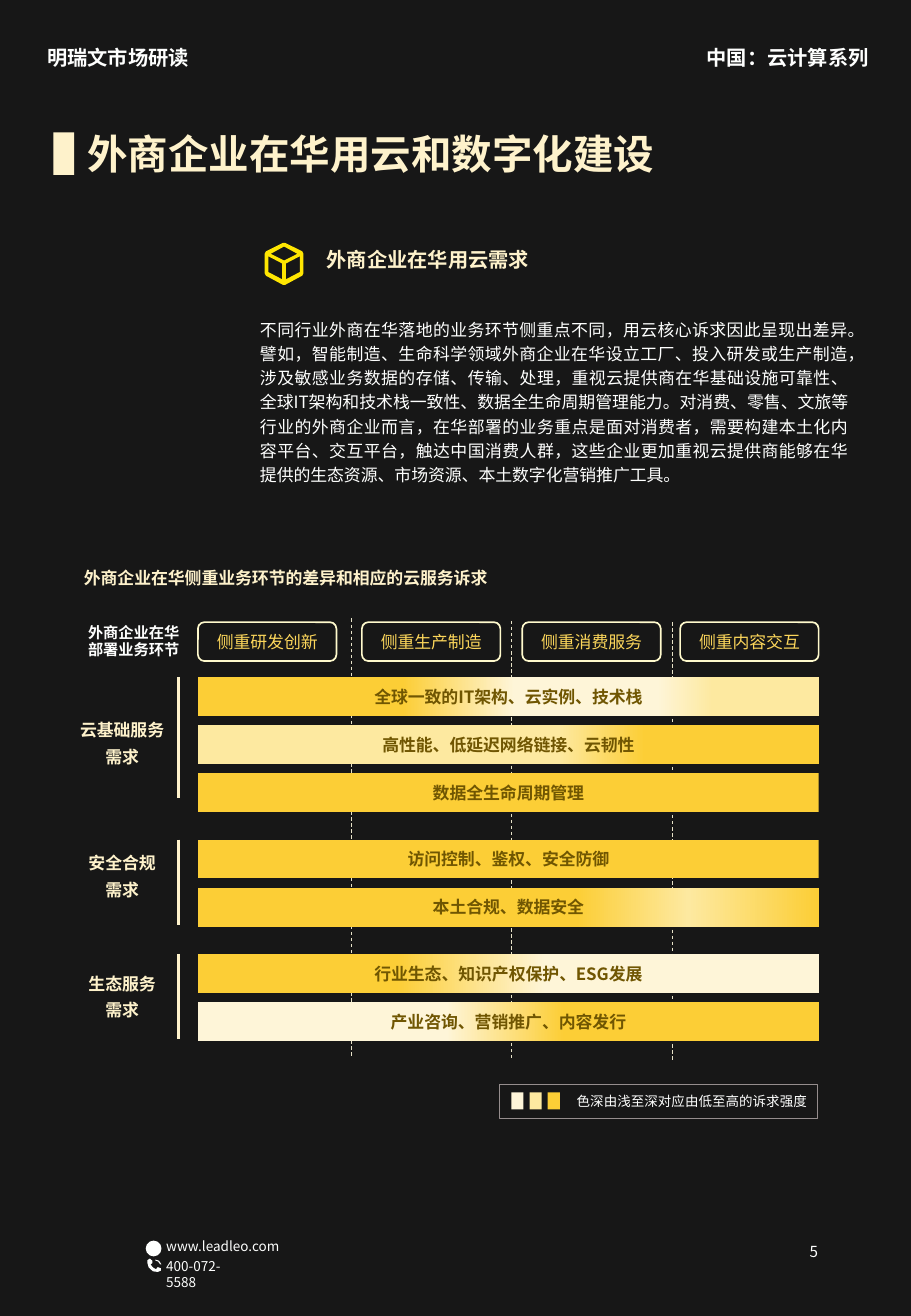
import copy

import pptx
import pptx.dml.color
import pptx.enum.dml
import pptx.enum.shapes
import pptx.enum.text
import pptx.oxml.ns
import pptx.util
from lxml import etree
from pptx.util import Inches

FONT = "Noto Sans CJK SC"
COLORS = {
    "night": "171717", "white": "FEFFFE", "cream": "FEF2CB", "gold": "FCD65B",
    "yellow": "FFE601", "outline": "FFFACD", "dash": "E6E1C7", "gray": "958D8D",
    "brown": "705602", "low": "FEF5D8", "mid": "FDE9A0", "high": "FCCE36",
}
ALIGN = {
    "left": pptx.enum.text.PP_ALIGN.LEFT,
    "center": pptx.enum.text.PP_ALIGN.CENTER,
    "justify": pptx.enum.text.PP_ALIGN.JUSTIFY,
}
ANCHOR = {"top": pptx.enum.text.MSO_ANCHOR.TOP, "middle": pptx.enum.text.MSO_ANCHOR.MIDDLE}
SHAPES = pptx.enum.shapes.MSO_SHAPE
qn = pptx.oxml.ns.qn

BODY = (
    "不同行业外商在华落地的业务环节侧重点不同，用云核心诉求因此呈现出差异。"
    "譬如，智能制造、生命科学领域外商企业在华设立工厂、投入研发或生产制造，"
    "涉及敏感业务数据的存储、传输、处理，重视云提供商在华基础设施可靠性、"
    "全球IT架构和技术栈一致性、数据全生命周期管理能力。对消费、零售、文旅等"
    "行业的外商企业而言，在华部署的业务重点是面对消费者，需要构建本土化内容"
    "平台、交互平台，触达中国消费人群，这些企业更加重视云提供商能够在华提供"
    "的生态资源、市场资源、本土数字化营销推广工具。"
)
STAGES = [(1.63, "侧重研发创新"), (2.98, "侧重生产制造"),
          (4.3, "侧重消费服务"), (5.6, "侧重内容交互")]
DIVIDERS = [(2.89, 5.09), (4.21, 5.11), (5.54, 5.12)]
SOLID = [(0, "high"), (100, "high")]
NEEDS = [
    ("云基础服务\n需求", 5.57, 1.0, 5.81, [
        ("全球一致的IT架构、云实例、技术栈",
         [(0, "high"), (33, "high"), (51, "low"), (74, "low"), (83, "mid"), (100, "mid")]),
        ("高性能、低延迟网络链接、云韧性",
         [(11, "mid"), (58, "mid"), (72, "high"), (100, "high")]),
        ("数据全生命周期管理", SOLID),
    ]),
    ("安全合规\n需求", 6.91, 0.7, 6.91, [
        ("访问控制、鉴权、安全防御", SOLID),
        ("本土合规、数据安全", [(11, "high"), (61, "high"), (79, "mid"), (100, "high")]),
    ]),
    ("生态服务\n需求", 7.85, 0.7, 7.9, [
        ("行业生态、知识产权保护、ESG发展",
         [(3, "high"), (32, "high"), (56, "low"), (100, "low")]),
        ("产业咨询、营销推广、内容发行",
         [(0, "low"), (40, "low"), (59, "high"), (100, "high")]),
    ]),
]
CUBE = [
    [(2500, 2090), (2490, 2070), (2350, 2000), (2330, 2000), (2190, 2070), (2180, 2090),
     (2180, 2250), (2190, 2270), (2330, 2345), (2350, 2345), (2490, 2270), (2500, 2250)],
    [(2340, 2030), (2450, 2090), (2340, 2145), (2230, 2090)],
    [(2210, 2110), (2325, 2170), (2325, 2300), (2210, 2240)],
    [(2470, 2240), (2355, 2300), (2355, 2170), (2470, 2110)],
]
PHONE = [
    [(1215, 10400), (1215, 10375), (1235, 10362), (1255, 10380), (1255, 10400),
     (1240, 10410), (1260, 10435), (1285, 10450), (1300, 10432), (1325, 10442),
     (1325, 10462), (1300, 10472), (1260, 10467), (1225, 10435)],
    [(1280, 10370), (1310, 10380), (1330, 10410), (1320, 10410), (1303, 10387),
     (1280, 10378)],
]


def rgb(name):
    return pptx.dml.color.RGBColor.from_string(COLORS[name])


def write_text(tf, text, size=10, color="white", bold=False, align="left",
               anchor="top", spacing=1.0, inset=(0.1, 0.05)):
    tf.word_wrap = True
    tf.auto_size = pptx.enum.text.MSO_AUTO_SIZE.NONE
    tf.vertical_anchor = ANCHOR[anchor]
    tf.margin_left = tf.margin_right = Inches(inset[0])
    tf.margin_top = tf.margin_bottom = Inches(inset[1])
    for i, line in enumerate(text.split("\n")):
        p = tf.add_paragraph() if i else tf.paragraphs[0]
        p.alignment = ALIGN[align]
        p.line_spacing = spacing
        p.space_before = p.space_after = pptx.util.Pt(0)
        r = p.add_run()
        r.text = line
        r.font.size = pptx.util.Pt(size)
        r.font.bold = bold
        r.font.color.rgb = rgb(color)
        r.font.name = FONT
        rPr = r._r.get_or_add_rPr()
        rPr.set("lang", "zh-CN")
        etree.SubElement(rPr, qn("a:ea")).set("typeface", FONT)


class Page:
    """Draws styled elements on the current slide."""

    def __init__(self, prs):
        self.s = prs.slides.add_slide(prs.slide_layouts[1])
        fill = self.s.background.fill
        fill.solid()
        fill.fore_color.rgb = rgb("night")

    def placeholder(self, index, box, text, **fmt):
        sp = self.s.placeholders[index]
        sp.left, sp.top, sp.width, sp.height = map(Inches, box)
        if index:
            pPr = sp.text_frame.paragraphs[0]._p.get_or_add_pPr()
            pPr.set("marL", "0")
            pPr.set("indent", "0")
            etree.SubElement(pPr, qn("a:buNone"))
        write_text(sp.text_frame, text, **fmt)

    def text(self, box, text, **fmt):
        sp = self.s.shapes.add_textbox(*map(Inches, box))
        write_text(sp.text_frame, text, **fmt)

    def label(self, box, text, **fmt):
        self.text(box, text, anchor="middle", inset=(0.04, 0.02), **fmt)

    def paint(self, sp, fill=None, line=None, width=1):
        sp.shadow.inherit = False
        if fill:
            sp.fill.solid()
            sp.fill.fore_color.rgb = rgb(fill)
        else:
            sp.fill.background()
        if line:
            sp.line.color.rgb = rgb(line)
            sp.line.width = pptx.util.Pt(width)
        else:
            sp.line.fill.background()

    def shape(self, box, kind=SHAPES.RECTANGLE, **paint):
        sp = self.s.shapes.add_shape(kind, *map(Inches, box))
        self.paint(sp, **paint)
        return sp

    def bar(self, box, text, stops):
        sp = self.shape(box)
        sp.fill.gradient()
        sp.fill.gradient_angle = 0
        gs_list = sp._element.find(".//" + qn("a:gsLst"))
        for _ in stops[2:]:
            gs_list.append(copy.deepcopy(gs_list[0]))
        for stop, (position, color) in zip(sp.fill.gradient_stops, stops):
            stop.position = position / 100
            stop.color.rgb = rgb(color)
        write_text(sp.text_frame, text, color="brown", bold=True, align="center", anchor="middle")

    def line(self, x, top, length, color, width, dashed=False):
        c = self.s.shapes.add_connector(
            pptx.enum.shapes.MSO_CONNECTOR.STRAIGHT,
            Inches(x), Inches(top), Inches(x), Inches(top + length))
        c.line.color.rgb = rgb(color)
        c.line.width = pptx.util.Pt(width)
        if dashed:
            c.line.dash_style = pptx.enum.dml.MSO_LINE.DASH
        etree.SubElement(c._element.spPr, qn("a:effectLst"))

    def icon(self, outlines, color):
        fb = self.s.shapes.build_freeform(*outlines[0][0], scale=Inches(0.001))
        fb.add_line_segments(outlines[0][1:], close=True)
        for outline in outlines[1:]:
            fb.move_to(*outline[0])
            fb.add_line_segments(outline[1:], close=True)
        self.paint(fb.convert_to_shape(), fill=color)


def main():
    Pt = pptx.util.Pt
    prs = pptx.Presentation()
    prs.slide_width, prs.slide_height = Inches(7.5), Inches(10.83)
    page = Page(prs)

    page.text((0.29, 0.32, 1.4, 0.3), "明瑞文市场研读", size=12, bold=True, spacing=Pt(14.4))
    page.text((5.72, 0.32, 1.58, 0.3), "中国：云计算系列", size=12, bold=True, spacing=Pt(14.4))
    page.shape((0.44, 1.09, 0.17, 0.35), fill="cream")
    page.placeholder(0, (0.68, 1.01, 5.43, 0.55), "外商企业在华用云和数字化建设", size=24,
                     color="cream", bold=True, anchor="middle", spacing=0.9, inset=(0.04, 0.02))
    page.icon(CUBE, "yellow")
    page.label((2.65, 1.87, 4.25, 0.55), "外商企业在华用云需求", size=12,
               color="cream", bold=True, spacing=0.9)
    page.placeholder(1, (2.04, 2.55, 5.04, 1.49), BODY, align="justify", spacing=Pt(14.3))

    page.label((0.65, 4.54, 5.11, 0.43), "外商企业在华侧重业务环节的差异和相应的云服务诉求",
               color="cream", bold=True)
    page.label((0.2, 5.1, 1.8, 0.36), "外商企业在华\n部署业务环节", size=9,
               bold=True, align="center", spacing=Pt(9.8))
    for x, top in DIVIDERS:
        page.line(x, top, 3.6, "dash", 0.5, dashed=True)
    for x, stage in STAGES:
        sp = page.shape((x, 5.12, 1.14, 0.32), SHAPES.ROUNDED_RECTANGLE, line="outline")
        write_text(sp.text_frame, stage, color="gold", align="center", anchor="middle",
                   inset=(0.04, 0.02))
    for need, top, length, label_top, bars in NEEDS:
        page.label((0.57, label_top, 0.87, 0.55), need, color="cream", bold=True,
                   align="center", spacing=Pt(16))
        page.line(1.47, top, length, "cream", 2.25)
        for i, (text, stops) in enumerate(bars):
            page.bar((1.63, top + 0.395 * i, 5.11, 0.32), text, stops)

    page.shape((4.11, 8.92, 2.62, 0.28), line="gray", width=0.25)
    for i, level in enumerate(("low", "mid", "high")):
        page.shape((4.21 + 0.15 * i, 8.99, 0.1, 0.14), fill=level)
    page.text((4.65, 8.92, 2.16, 0.24), "色深由浅至深对应由低至高的诉求强度", size=8,
              align="justify", spacing=Pt(11.5))

    page.shape((1.2, 10.21, 0.13, 0.13), SHAPES.OVAL, fill="white")
    page.text((1.27, 10.14, 1.18, 0.24), "www.leadleo.com", size=8, spacing=Pt(9.6))
    page.icon(PHONE, "white")
    page.text((1.27, 10.3, 0.8, 0.24), "400-072-5588", size=8, spacing=Pt(9.6))
    page.text((6.26, 10.14, 0.88, 0.32), "5", size=9, align="center", anchor="middle")
    prs.save("out.pptx")


if __name__ == "__main__":
    main()
